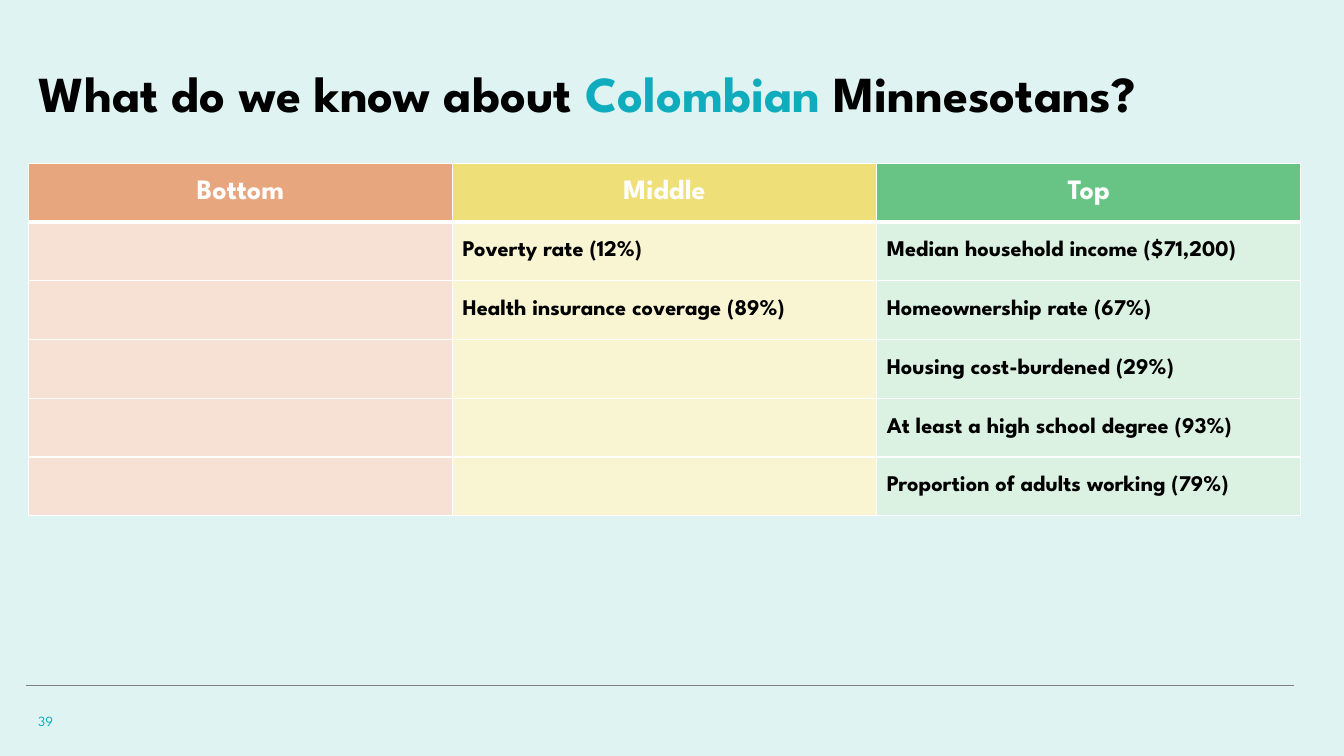
from dataclasses import dataclass

from lxml.etree import SubElement
from pptx import Presentation
from pptx.dml.color import RGBColor as Color
from pptx.enum.shapes import MSO_CONNECTOR as Connector, MSO_SHAPE as Shape
from pptx.enum.text import MSO_ANCHOR as Anchor, PP_ALIGN as Align
from pptx.oxml import parse_xml
from pptx.oxml.ns import nsdecls, qn
from pptx.util import Pt


@dataclass(frozen=True)
class Theme:
    font: str = "League Spartan"
    background: str = "DFF4F2"
    text: str = "000000"
    accent: str = "0FACBD"
    white: str = "FFFFFF"
    rule: str = "808080"
    headers: tuple = ("E8A67F", "EEDF79", "68C484")
    bodies: tuple = ("F7E1D4", "F9F4D2", "DBF1E2")
    title_size: float = 36
    header_size: float = 20
    body_size: float = 16
    number_size: float = 10


class SlideBuilder:
    def __init__(self, slide, theme):
        self.slide = slide
        self.theme = theme

    def add_run(self, paragraph, text, size, color, bold=True):
        run = paragraph.add_run()
        run.text = text
        run.font.name = self.theme.font
        run.font.size = Pt(size)
        run.font.bold = bold
        run.font.color.rgb = Color.from_string(color)

    def rectangle(self, left, top, width, height, color):
        shape = self.slide.shapes.add_shape(
            Shape.RECTANGLE, Pt(left), Pt(top), Pt(width), Pt(height))
        shape.shadow.inherit = False
        shape.fill.solid()
        shape.fill.fore_color.rgb = Color.from_string(color)
        shape.line.fill.background()

    def line(self, left, right, y, color, weight):
        line = self.slide.shapes.add_connector(
            Connector.STRAIGHT, Pt(left), Pt(y), Pt(right), Pt(y))
        line.line.color.rgb = Color.from_string(color)
        line.line.width = Pt(weight)
        SubElement(line._element.spPr, qn("a:effectLst"))

    def text(self, left, top, width, height, runs, size, anchor,
             bold=True, spacing=1.0):
        box = self.slide.shapes.add_textbox(
            Pt(left), Pt(top), Pt(width), Pt(height))
        frame = box.text_frame
        frame.word_wrap = True
        frame.vertical_anchor = anchor
        paragraph = frame.paragraphs[0]
        paragraph.line_spacing = spacing
        for text, color in runs:
            self.add_run(paragraph, text, size, color, bold)

    def cell_borders(self, cell, bottom):
        properties = cell._tc.get_or_add_tcPr()
        weights = {"lnL": 1, "lnR": 1, "lnT": 1, "lnB": bottom}
        # Borders come before the fill in the cell properties
        for index, (side, weight) in enumerate(weights.items()):
            properties.insert(index, parse_xml(
                f'<a:{side} {nsdecls("a")} w="{Pt(weight)}"><a:solidFill>'
                f'<a:srgbClr val="{self.theme.white}"/></a:solidFill></a:{side}>'))

    def table(self, left, top, column_width, row_height, columns):
        theme = self.theme
        row_count = 1 + max(len(items) for items in columns.values())
        table = self.slide.shapes.add_table(
            row_count, len(columns), Pt(left), Pt(top),
            Pt(column_width * len(columns)), Pt(row_height * row_count)).table
        for row in table.rows:
            row.height = Pt(row_height)
        for index, (header, items) in enumerate(columns.items()):
            table.columns[index].width = Pt(column_width)
            for row in range(row_count):
                is_header = row == 0
                cell = table.cell(row, index)
                cell.vertical_anchor = Anchor.MIDDLE
                cell.fill.solid()
                fills = theme.headers if is_header else theme.bodies
                cell.fill.fore_color.rgb = Color.from_string(fills[index])
                self.cell_borders(cell, 3 if is_header else 1)
                paragraph = cell.text_frame.paragraphs[0]
                if is_header:
                    paragraph.alignment = Align.CENTER
                    self.add_run(paragraph, header, theme.header_size, theme.white)
                elif row <= len(items):
                    self.add_run(paragraph, items[row - 1], theme.body_size, theme.text)


def main():
    theme = Theme()
    presentation = Presentation()
    presentation.slide_width = Pt(960)
    presentation.slide_height = Pt(540)
    slide = presentation.slides.add_slide(presentation.slide_layouts[6])
    builder = SlideBuilder(slide, theme)

    # Background and footer rule
    builder.rectangle(0, 0, 960, 540, theme.background)
    builder.line(18.7, 924.5, 489.6, theme.rule, 0.5)

    # Title
    builder.text(20.2, 28.8, 925.2, 62.6, [
        ("What do we know about ", theme.text),
        ("Colombian", theme.accent),
        (" Minnesotans?", theme.text),
    ], theme.title_size, Anchor.BOTTOM, spacing=0.9)

    # Ranking table
    builder.table(20.2, 116.6, 303, 42, {
        "Bottom": [],
        "Middle": ["Poverty rate (12%)", "Health insurance coverage (89%)"],
        "Top": [
            "Median household income ($71,200)",
            "Homeownership rate (67%)",
            "Housing cost-burdened (29%)",
            "At least a high school degree (93%)",
            "Proportion of adults working (79%)",
        ],
    })

    # Slide number
    builder.text(20.2, 500.4, 216, 28.8, [("39", theme.accent)],
                 theme.number_size, Anchor.MIDDLE, bold=False)

    presentation.save("out.pptx")


if __name__ == "__main__":
    main()
